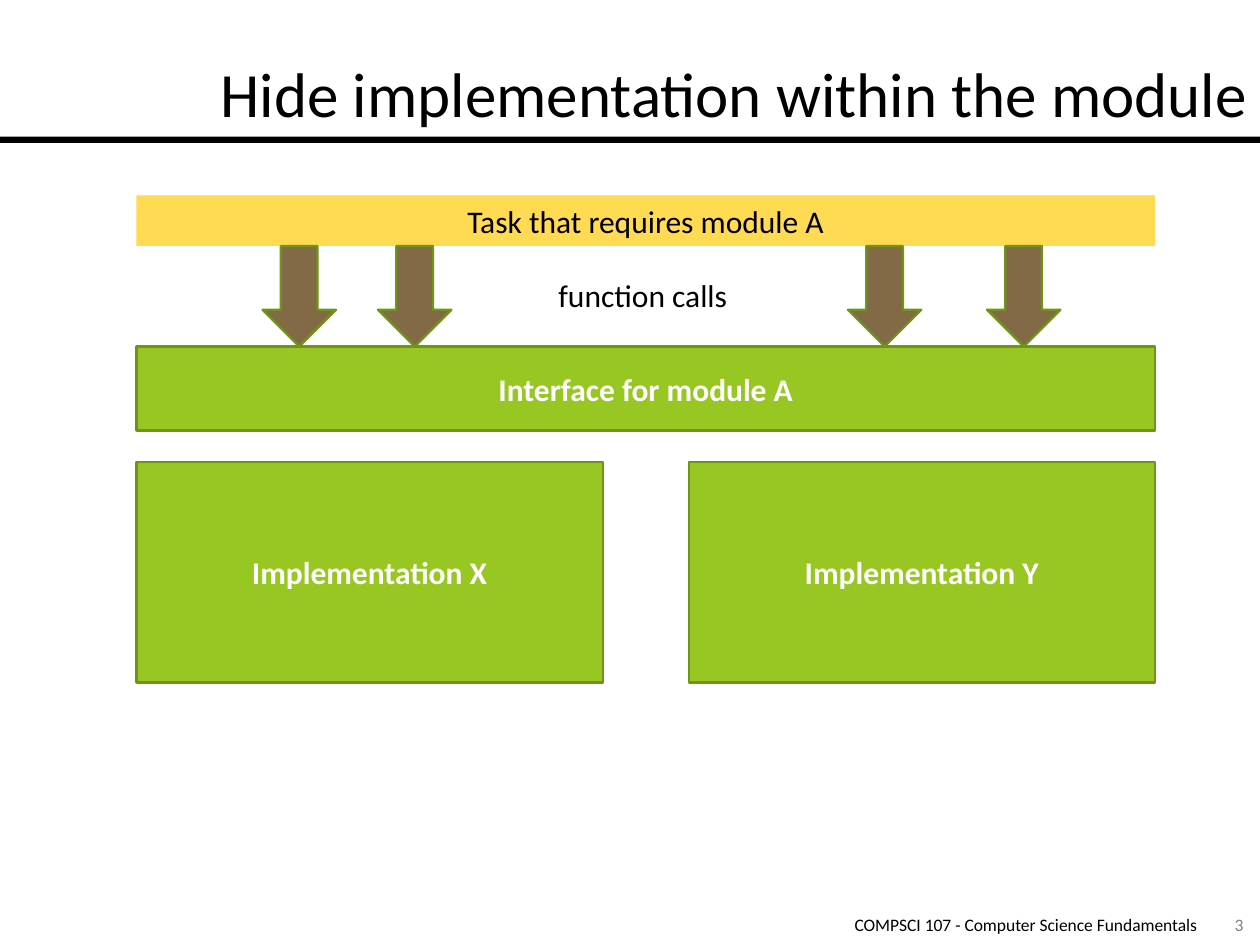
from dataclasses import dataclass

from pptx import Presentation
from pptx.dml.color import RGBColor
from pptx.enum.shapes import MSO_SHAPE as Shape
from pptx.enum.text import MSO_ANCHOR as Anchor, MSO_AUTO_SIZE as AutoSize, PP_ALIGN as Align
from pptx.util import Pt


@dataclass(frozen=True)
class Theme:
    font: str = "Calibri"
    black: str = "000000"
    white: str = "FFFFFF"
    grey: str = "808080"
    task: str = "FFDA52"
    module: str = "98C723"
    outline: str = "70931A"
    call: str = "826A47"
    title_size: int = 36
    label_size: int = 18
    footer_size: int = 10
    line_width: float = 1.25


class SlideBuilder:
    def __init__(self, slide, theme):
        self.slide = slide
        self.theme = theme

    def fill_text(self, frame, text, size, color, align=Align.CENTER, bold=False, **frame_format):
        """Set the text; frame_format overrides text frame attributes."""
        settings = {"auto_size": AutoSize.NONE, "word_wrap": True,
                    "vertical_anchor": Anchor.MIDDLE} | frame_format
        for name, value in settings.items():
            setattr(frame, name, value)
        paragraph = frame.paragraphs[0]
        paragraph.alignment = align
        run = paragraph.add_run()
        run.text = text
        for name, value in {"name": self.theme.font, "size": Pt(size), "bold": bold}.items():
            setattr(run.font, name, value)
        run.font.color.rgb = RGBColor.from_string(color)

    def title(self, text, left, top, width, height):
        title = self.slide.shapes.title
        box = {"left": left, "top": top, "width": width, "height": height}
        for name, value in box.items():
            setattr(title, name, Pt(value))
        self.fill_text(title.text_frame, text, self.theme.title_size, self.theme.black,
                       Align.RIGHT, vertical_anchor=Anchor.BOTTOM)

    def shape(self, kind, box, fill, outline=None):
        shape = self.slide.shapes.add_shape(kind, *map(Pt, box))
        shape.shadow.inherit = False
        shape.fill.solid()
        shape.fill.fore_color.rgb = RGBColor.from_string(fill)
        if outline:
            shape.line.color.rgb = RGBColor.from_string(outline)
            shape.line.width = Pt(self.theme.line_width)
        else:
            shape.line.fill.background()
        return shape

    def module(self, text, *box):
        block = self.shape(Shape.RECTANGLE, box, self.theme.module, self.theme.outline)
        self.fill_text(block.text_frame, text, self.theme.label_size, self.theme.white, bold=True)

    def task(self, text, *box):
        bar = self.shape(Shape.RECTANGLE, box, self.theme.task)
        self.fill_text(bar.text_frame, text, self.theme.label_size, self.theme.black)

    def call_arrow(self, *box):
        self.shape(Shape.DOWN_ARROW, box, self.theme.call, self.theme.outline)

    def text(self, text, box, size, color, align=Align.CENTER, **frame_format):
        label = self.slide.shapes.add_textbox(*map(Pt, box))
        self.fill_text(label.text_frame, text, size, color, align, **frame_format)


def main():
    deck = Presentation()
    deck.slide_width, deck.slide_height = Pt(720), Pt(540)
    theme = Theme()
    page = SlideBuilder(deck.slides.add_slide(deck.slide_layouts[5]), theme)

    page.shape(Shape.RECTANGLE, (0, 78, 720, 3.6), theme.black)
    page.title("Hide implementation within the module", 0, 0, 720, 78)

    no_margins = dict.fromkeys(
        ("margin_left", "margin_top", "margin_right", "margin_bottom"), 0)
    page.text("3", (690, 522, 36, 12), theme.footer_size, theme.grey)
    page.text("COMPSCI 107 - Computer Science Fundamentals", (348, 522, 336, 12),
              theme.footer_size, theme.black, Align.RIGHT, **no_margins)

    left, width = 78, 582
    task_top, task_height, interface_top = 111.6, 29, 198
    calls_top = task_top + task_height
    page.task("Task that requires module A", left, task_top, width, task_height)
    page.module("Interface for module A", left, interface_top, width, 48)

    implementation_width = 266.4
    for column, name in enumerate("XY"):
        page.module(f"Implementation {name}",
                    left + column * (width - implementation_width), 264,
                    implementation_width, 126)

    for call_left in (150, 216, 484.5, 564):
        page.call_arrow(call_left, calls_top, 42, interface_top - calls_top)
    page.text("function calls", (312, 154, 115, 29), theme.label_size, theme.black,
              Align.LEFT, word_wrap=False, vertical_anchor=Anchor.TOP,
              auto_size=AutoSize.SHAPE_TO_FIT_TEXT)

    deck.save("out.pptx")


if __name__ == "__main__":
    main()
